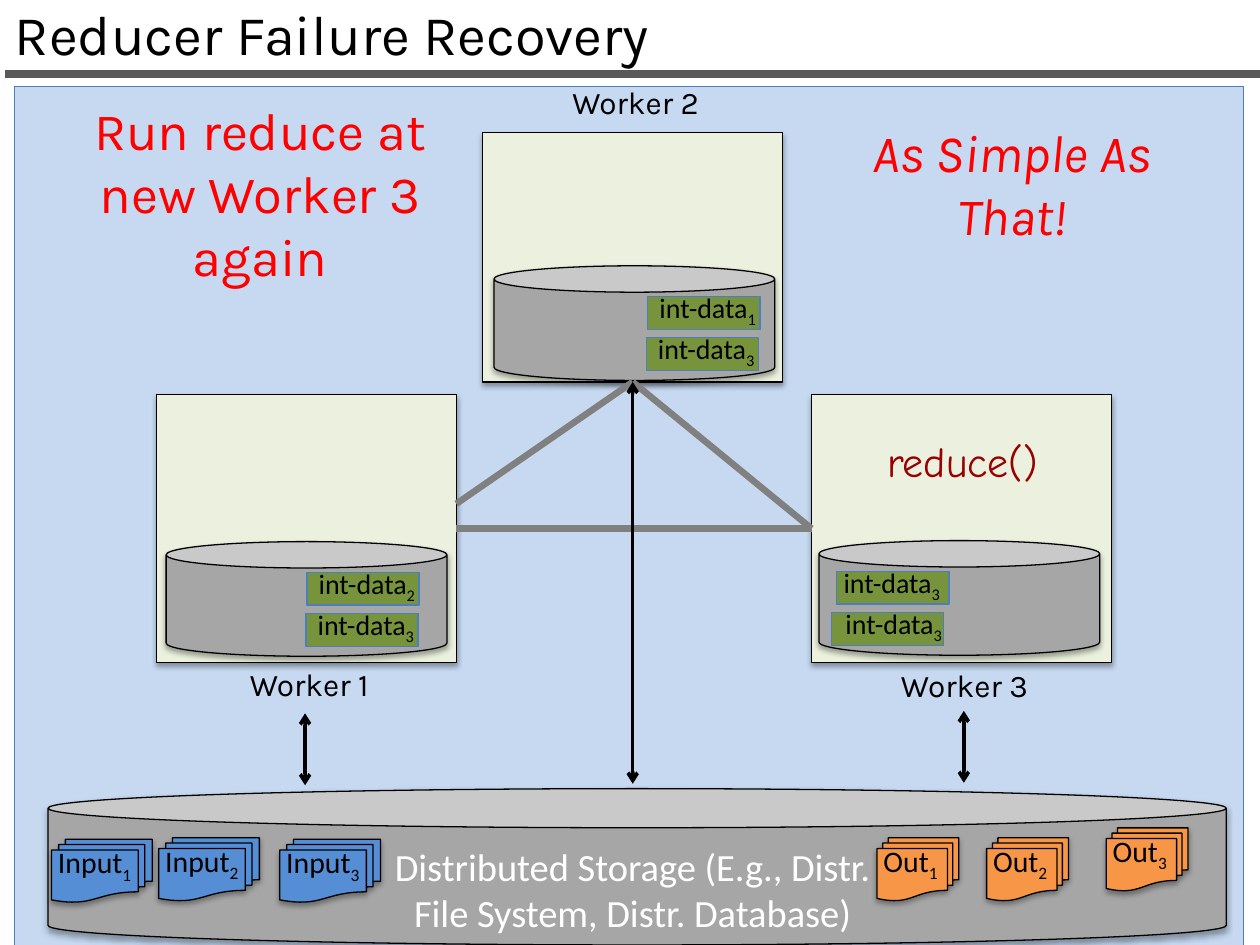
from dataclasses import dataclass

from lxml.etree import SubElement
from pptx import Presentation
from pptx.dml.color import RGBColor
from pptx.enum.shapes import MSO_CONNECTOR, MSO_SHAPE
from pptx.enum.text import MSO_AUTO_SIZE, PP_ALIGN
from pptx.oxml.ns import qn
from pptx.util import Cm, Pt


@dataclass(frozen=True)
class Theme:
    heading_font: str = "Karla"
    body_font: str = "Calibri"
    code_font: str = "Comic Neue"
    title_size: int = 32
    callout_size: int = 30
    code_size: int = 24
    storage_size: int = 22
    label_size: int = 18
    document_size: int = 17
    tag_size: int = 16
    black: str = "000000"
    white: str = "FFFFFF"
    red: str = "FF0000"
    dark_red: str = "990000"
    rule: str = "595959"
    link: str = "808080"
    cluster: str = "C6D9F1"
    outline: str = "4B7EBC"
    worker: str = "EBF1DE"
    disk: str = "A6A6A6"
    tag: str = "77933C"
    input: str = "558ED5"
    output: str = "F79646"


@dataclass(frozen=True)
class Box:
    """A rectangle in centimetres."""
    left: float
    top: float
    width: float
    height: float

    def inner(self, left, top, width, height):
        return Box(self.left + left, self.top + top, width, height)

    def lengths(self):
        return [Cm(value) for value in (self.left, self.top, self.width, self.height)]


THEME = Theme()
SLIDE = Box(0, 0, 25.4, 19.05)


def add_text(slide, box, text, size, color=THEME.black, font=THEME.body_font,
             align=PP_ALIGN.CENTER, subscript="", italic=None, wrap=True):
    text_box = slide.shapes.add_textbox(*box.lengths())
    frame = text_box.text_frame
    frame.word_wrap = wrap
    frame.auto_size = MSO_AUTO_SIZE.SHAPE_TO_FIT_TEXT
    paragraph = frame.paragraphs[0]
    paragraph.alignment = align
    for part in filter(None, (text, subscript)):
        run = paragraph.add_run()
        run.text = part
        run.font.name = font
        run.font.size = Pt(size)
        run.font.italic = italic
        run.font.color.rgb = RGBColor.from_string(color)
    if subscript:
        run._r.get_or_add_rPr().set("baseline", "-25000")


def add_shadow(shape):
    effects = shape._element.spPr.find(qn("a:effectLst"))
    shadow = SubElement(effects, qn("a:outerShdw"), blurRad="40000", dist="23000",
                        dir="5400000", rotWithShape="0")
    color = SubElement(shadow, qn("a:srgbClr"), val=THEME.black)
    SubElement(color, qn("a:alpha"), val="35000")


def add_solid(slide, preset, box, fill, line=THEME.black, shadow=True):
    shape = slide.shapes.add_shape(preset, *box.lengths())
    shape.shadow.inherit = False
    shape.fill.solid()
    shape.fill.fore_color.rgb = RGBColor.from_string(fill)
    shape.line.color.rgb = RGBColor.from_string(line)
    shape.line.width = Pt(0.75)
    if shadow:
        add_shadow(shape)
    return shape


def add_line(slide, start, end, color, width, arrows=False):
    line = slide.shapes.add_connector(
        MSO_CONNECTOR.STRAIGHT, *(Cm(value) for value in (*start, *end)))
    line.line.color.rgb = RGBColor.from_string(color)
    line.line.width = Pt(width)
    if arrows:
        for side in ("headEnd", "tailEnd"):
            SubElement(line.line._get_or_add_ln(), qn(f"a:{side}"), type="arrow")
    SubElement(line._element.spPr, qn("a:effectLst"))
    return line


def add_header(slide, box):
    add_text(slide, box.inner(0.05, -0.13, 25.3, 1.68), "Reducer Failure Recovery",
             THEME.title_size, font=THEME.heading_font, align=PP_ALIGN.LEFT)
    add_line(slide, (box.left + 0.1, box.top + 1.5), (box.left + 25.5, box.top + 1.5),
             THEME.rule, 4.5)


def add_tag(slide, box, number, text_shift):
    add_solid(slide, MSO_SHAPE.RECTANGLE, box, THEME.tag, THEME.outline, shadow=False)
    add_text(slide, box.inner(text_shift, -0.25, 2.51, 0.94), "int-data",
             THEME.tag_size, subscript=number, wrap=False)


def add_worker(slide, box, name, label_top, disk_offset, tags):
    """Place a named worker; each tag is (left, number, text shift) on its disk."""
    add_text(slide, box.inner(0.06, label_top, box.width, 1.02), name,
             THEME.label_size, font=THEME.heading_font)
    worker = add_solid(slide, MSO_SHAPE.RECTANGLE, box, THEME.worker)
    disk_box = box.inner(*disk_offset, 5.66, 2.31)
    disk = add_solid(slide, MSO_SHAPE.CAN, disk_box, THEME.disk)
    disk.adjustments[0] = 0.23
    for row, (left, number, text_shift) in enumerate(tags):
        add_tag(slide, disk_box.inner(left, 0.62 + 0.83 * row, 2.26, 0.66),
                number, text_shift)
    return worker


def add_document(slide, box, name, number, fill):
    add_solid(slide, MSO_SHAPE.FLOWCHART_MULTIDOCUMENT, box, fill)
    add_text(slide, box.inner(-0.12, -0.03, box.width + 0.26, 0.99), name,
             THEME.document_size, align=PP_ALIGN.LEFT, subscript=number)


def add_storage(slide, box):
    add_solid(slide, MSO_SHAPE.CAN, box, THEME.disk)
    add_text(slide, box.inner(6.5, 0.97, 10.57, 2.13),
             "Distributed Storage (E.g., Distr. File System, Distr. Database)",
             THEME.storage_size, THEME.white)
    document_sets = (
        ("Input", THEME.input, 2.03, ((0.07, 1.02), (2.23, 0.99), (4.67, 1.02))),
        ("Out", THEME.output, 1.65, ((16.71, 0.99), (18.92, 0.99), (21.33, 0.79))),
    )
    for name, fill, width, places in document_sets:
        for number, place in enumerate(places, start=1):
            add_document(slide, box.inner(*place, width, 1.27), name, str(number), fill)


def add_cluster(slide, box):
    """Place the three workers, the links between them and the shared storage."""
    add_solid(slide, MSO_SHAPE.RECTANGLE, box, THEME.cluster, THEME.outline, shadow=False)
    add_storage(slide, box.inner(0.67, 14.15, 23.75, 3.15))

    first_box = box.inner(2.85, 6.2, 6.05, 5.41)
    second_box = box.inner(9.43, 0.92, 6.05, 5.03)
    third_box = box.inner(16.06, 6.2, 6.05, 5.41)
    first = add_worker(slide, first_box, "Worker 1", 5.33, (0.2, 2.97),
                       ((2.84, "2", -0.05), (2.82, "3", -0.05)))
    second = add_worker(slide, second_box, "Worker 2", -1.12, (0.23, 2.69),
                        ((3.1, "1", -0.05), (3.07, "3", -0.05)))
    third = add_worker(slide, third_box, "Worker 3", 5.36, (0.15, 2.95),
                       ((0.36, "3", -0.15), (0.25, "3", 0)))
    add_text(slide, third_box.inner(0.81, 0.71, 4.47, 1.27), "reduce()",
             THEME.code_size, THEME.dark_red, THEME.code_font)

    second_bottom = (second_box.left + second_box.width / 2,
                     second_box.top + second_box.height)
    first_right = first_box.left + first_box.width
    middle = first_box.top + first_box.height / 2

    first_link = add_line(slide, second_bottom, (first_right, middle - 0.5), THEME.link, 3.75)
    first_link.begin_connect(second, 2)
    third_link = add_line(slide, second_bottom, (third_box.left, middle), THEME.link, 3.75)
    third_link.begin_connect(second, 2)
    third_link.end_connect(third, 1)
    level_link = add_line(slide, (first_right, middle), (third_box.left, middle),
                          THEME.link, 3.75)
    level_link.begin_connect(first, 3)
    level_link.end_connect(third, 1)

    storage_arrow = add_line(slide, second_bottom, (second_bottom[0], box.top + 14.05),
                             THEME.black, 2, arrows=True)
    storage_arrow.begin_connect(second, 2)
    for left, top in ((5.85, 12.63), (19.13, 12.58)):
        start = box.inner(left, top, 0, 1.45)
        add_line(slide, (start.left, start.top), (start.left, start.top + start.height),
                 THEME.black, 2, arrows=True)


def add_callouts(slide, box):
    add_text(slide, box.inner(0.46, 0.1, 8.97, 4.11), "Run reduce at new Worker 3 again",
             THEME.callout_size, THEME.red, THEME.heading_font)
    add_text(slide, box.inner(16.06, 0.54, 8.08, 2.82), "As Simple As That!",
             THEME.callout_size, THEME.red, THEME.heading_font, italic=True)


def main():
    presentation = Presentation()
    presentation.slide_width = Cm(SLIDE.width)
    presentation.slide_height = Cm(SLIDE.height)
    slide = presentation.slides.add_slide(presentation.slide_layouts[6])
    cluster_box = SLIDE.inner(0.3, 1.75, 24.77, 17.4)
    add_header(slide, SLIDE)
    add_cluster(slide, cluster_box)
    add_callouts(slide, cluster_box)
    presentation.save("out.pptx")


if __name__ == "__main__":
    main()
